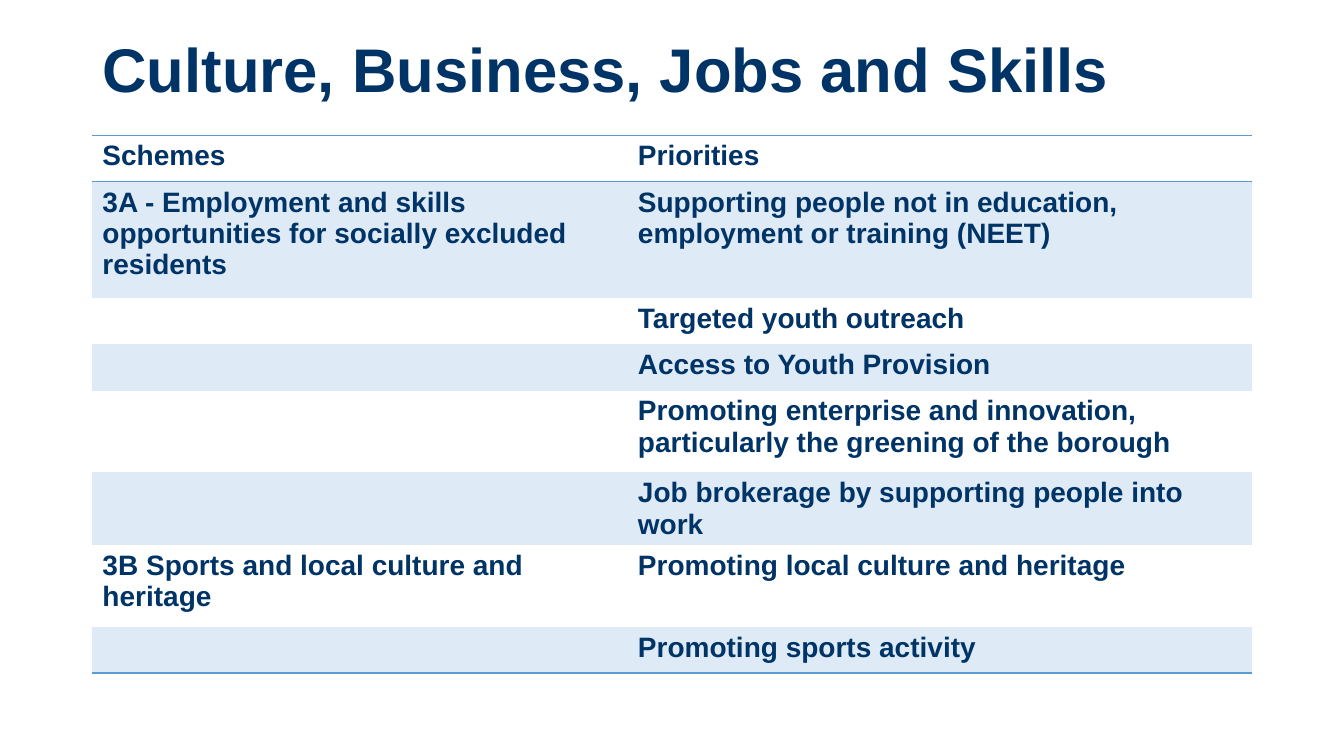
from lxml import etree
from pptx import Presentation
from pptx import util as u
from pptx.dml.color import RGBColor
from pptx.enum import text
from pptx.oxml import ns

PX = 9525  # 96 px to the inch
NAVY = RGBColor(0x00, 0x33, 0x66)
BLUE = RGBColor(0x5B, 0x9B, 0xD5)
PALE_BLUE = RGBColor(0xDE, 0xEB, 0xF7)
NO_STYLE = "{2D5ABB26-0587-4C30-8999-92F81FD0307C}"

COLUMN_WIDTHS = [510, 594]
ROWS = [
    (44, "Schemes", "Priorities"),
    (111, "3A - Employment and skills opportunities for socially excluded residents",
     "Supporting people not in education, employment or training (NEET)"),
    (44, "", "Targeted youth outreach"),
    (44, "", "Access to Youth Provision"),
    (78, "", "Promoting enterprise and innovation, particularly the greening of the borough"),
    (44, "", "Job brokerage by supporting people into work"),
    (78, "3B Sports and local culture and heritage", "Promoting local culture and heritage"),
    (44, "", "Promoting sports activity"),
]


def add_text(paragraph, words, size):
    run = paragraph.add_run()
    run.text = words
    run.font.name = "Arial"
    run.font.size = u.Pt(size)
    run.font.bold = True
    run.font.color.rgb = NAVY


def add_border(cell, side):
    """Draw a 1 pt blue line; side is lnT or lnB."""
    line = etree.SubElement(cell._tc.get_or_add_tcPr(), ns.qn(f"a:{side}"), w=str(u.Pt(1)))
    fill = etree.SubElement(line, ns.qn("a:solidFill"))
    etree.SubElement(fill, ns.qn("a:srgbClr"), val=str(BLUE))


presentation = Presentation()
presentation.slide_width = 1280 * PX
presentation.slide_height = 720 * PX
slide = presentation.slides.add_slide(presentation.slide_layouts[5])

title = slide.shapes.title
title.left, title.top, title.width, title.height = 88 * PX, 0, 1026 * PX, 139 * PX
title.text_frame.vertical_anchor = text.MSO_ANCHOR.MIDDLE
heading = title.text_frame.paragraphs[0]
heading.alignment = text.PP_ALIGN.LEFT
heading.line_spacing = 0.9
add_text(heading, "Culture, Business, Jobs and Skills", 44)

table_height = sum(row[0] for row in ROWS)
table = slide.shapes.add_table(
    len(ROWS), len(COLUMN_WIDTHS),
    88 * PX, 129 * PX, sum(COLUMN_WIDTHS) * PX, table_height * PX).table
table.first_row = False
table.horz_banding = False
table._tbl.tblPr.find(ns.qn("a:tableStyleId")).text = NO_STYLE

for column, width in zip(table.columns, COLUMN_WIDTHS):
    column.width = width * PX

for row_index, (height, *entries) in enumerate(ROWS):
    table.rows[row_index].height = height * PX
    for column_index, words in enumerate(entries):
        cell = table.cell(row_index, column_index)
        if row_index == 0:
            add_border(cell, "lnT")
        if row_index in (0, len(ROWS) - 1):
            add_border(cell, "lnB")
        if row_index % 2:
            cell.fill.solid()
            cell.fill.fore_color.rgb = PALE_BLUE
        else:
            cell.fill.background()
        if words:
            add_text(cell.text_frame.paragraphs[0], words, 20)

presentation.save("out.pptx")
